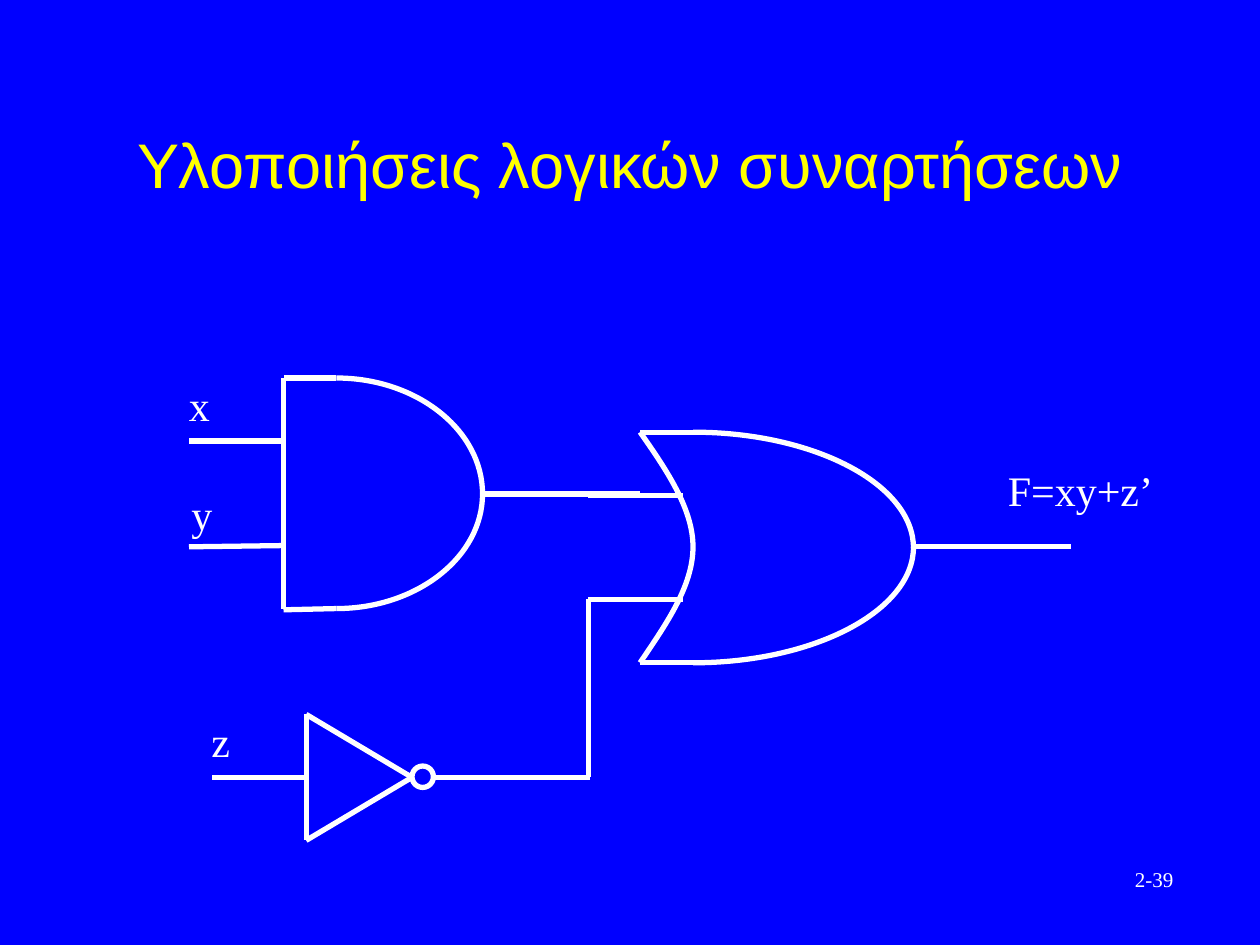
from dataclasses import dataclass

from lxml import etree
from pptx import Presentation
from pptx.dml.color import RGBColor
from pptx.enum.shapes import MSO_CONNECTOR, MSO_SHAPE
from pptx.enum.text import MSO_ANCHOR, MSO_AUTO_SIZE, PP_ALIGN
from pptx.oxml.ns import qn
from pptx.util import Inches, Pt

STRAIGHT = MSO_CONNECTOR.STRAIGHT
OVAL = MSO_SHAPE.OVAL
MIDDLE = MSO_ANCHOR.MIDDLE
CENTER = PP_ALIGN.CENTER
NO_AUTOFIT, GROW = MSO_AUTO_SIZE.NONE, MSO_AUTO_SIZE.SHAPE_TO_FIT_TEXT
TITLE_ONLY = 5
ARC_RATIO = 0.55  # cubic control distance of a quarter ellipse

Point = tuple[float, float]


@dataclass(frozen=True)
class Theme:
    background: RGBColor = RGBColor(0x00, 0x00, 0xFF)
    ink: RGBColor = RGBColor(0xFF, 0xFF, 0xFF)
    title: RGBColor = RGBColor(0xFF, 0xFF, 0x00)
    title_font: str = "Arial"
    label_font: str = "Times New Roman"
    title_size: int = 36
    label_size: int = 24
    number_size: int = 12
    line_width: int = 3


@dataclass(frozen=True)
class Wire:
    start: Point
    end: Point


@dataclass(frozen=True)
class Arc:
    """Quarter ellipse from its horizontal end to its rightmost tip."""
    start: Point
    tip: Point


@dataclass(frozen=True)
class Segment:
    """Cubic curve from the previous point to end."""
    first: Point
    second: Point
    end: Point


@dataclass(frozen=True)
class Label:
    text: str
    left: float
    top: float
    width: float
    height: float = 0.5
    size: int = Theme.label_size


THEME = Theme()

WIRES = [
    # AND gate body, inputs and output
    Wire((2.67, 4.83), (2.25, 4.84)),
    Wire((2.67, 3), (2.25, 3)),
    Wire((2.25, 3), (2.25, 4.83)),
    Wire((2.25, 3.5), (1.5, 3.5)),
    Wire((2.25, 4.33), (1.5, 4.34)),
    Wire((3.83, 3.92), (5.08, 3.92)),
    # OR gate body, inputs and output
    Wire((5.5, 5.26), (5.08, 5.26)),
    Wire((5.5, 3.43), (5.08, 3.43)),
    Wire((5.42, 3.93), (4.67, 3.93)),
    Wire((5.42, 4.76), (4.67, 4.76)),
    Wire((7.25, 4.34), (8.5, 4.34)),
    # NOT gate input, output and triangle
    Wire((2.43, 6.17), (1.68, 6.17)),
    Wire((3.43, 6.17), (4.68, 6.17)),
    Wire((2.43, 5.67), (2.43, 6.67)),
    Wire((2.43, 6.67), (3.27, 6.17)),
    Wire((2.43, 5.67), (3.27, 6.17)),
    # Riser from the NOT gate to the OR gate
    Wire((4.67, 4.75), (4.67, 6.17)),
]

ARCS = [
    Arc((2.67, 3), (3.83, 3.92)),
    Arc((2.67, 4.83), (3.83, 3.92)),
    Arc((5.5, 3.43), (7.25, 4.35)),
    Arc((5.5, 5.26), (7.25, 4.34)),
]

# Hollow back of the OR gate: two mirrored halves
OR_BACK_START = (5.08, 3.43)
OR_BACK = [
    Segment((5.29, 3.73), (5.5, 4.04), (5.5, 4.34)),
    Segment((5.5, 4.65), (5.29, 4.95), (5.08, 5.26)),
]

LABELS = [
    Label("x", 1.4, 2.96, 0.37),
    Label("y", 1.42, 3.83, 0.37),
    Label("z", 1.58, 5.63, 0.35),
    Label("F=xy+z’", 7.9, 3.64, 1.38),
    Label("2-39", 8.91, 6.83, 0.53, 0.3, THEME.number_size),
]


def style_line(shape) -> None:
    shape.line.color.rgb = THEME.ink
    shape.line.width = Pt(THEME.line_width)


def style_outline(shape) -> None:
    shape.shadow.inherit = False
    shape.fill.background()
    style_line(shape)


def style_text(paragraph, font_name: str, size: int, color: RGBColor) -> None:
    for run in paragraph.runs:
        run.font.name = font_name
        run.font.size = Pt(size)
        run.font.color.rgb = color


def draw_curve(slide, start: Point, segments: list[Segment]) -> None:
    """Build a freeform through the end points, then bend each segment."""
    builder = slide.shapes.build_freeform(Inches(start[0]), Inches(start[1]), scale=1.0)
    builder.add_line_segments(
        [(Inches(x), Inches(y)) for x, y in (segment.end for segment in segments)],
        close=False)
    shape = builder.convert_to_shape()
    straight_parts = list(shape._element.iter(qn("a:lnTo")))
    for straight, segment in zip(straight_parts, segments):
        cubic = etree.Element(qn("a:cubicBezTo"))
        for x, y in (segment.first, segment.second, segment.end):
            etree.SubElement(cubic, qn("a:pt"), x=str(Inches(x) - shape.left),
                             y=str(Inches(y) - shape.top))
        straight.getparent().replace(straight, cubic)
    style_outline(shape)


def draw_arc(slide, arc: Arc) -> None:
    (x, y), (tip_x, tip_y) = arc.start, arc.tip
    first = (x + ARC_RATIO * (tip_x - x), y)
    second = (tip_x, tip_y + ARC_RATIO * (y - tip_y))
    draw_curve(slide, arc.start, [Segment(first, second, arc.tip)])


def draw_wire(slide, wire: Wire) -> None:
    ends = [Inches(value) for value in (*wire.start, *wire.end)]
    connector = slide.shapes.add_connector(STRAIGHT, *ends)
    style_line(connector)
    etree.SubElement(connector._element.spPr, qn("a:effectLst"))


def draw_bubble(slide, left: float, top: float, diameter: float) -> None:
    style_outline(slide.shapes.add_shape(
        OVAL, Inches(left), Inches(top), Inches(diameter), Inches(diameter)))


def draw_label(slide, label: Label) -> None:
    box = slide.shapes.add_textbox(
        Inches(label.left), Inches(label.top), Inches(label.width), Inches(label.height))
    text_frame = box.text_frame
    text_frame.text = label.text
    text_frame.word_wrap = False
    text_frame.auto_size = GROW
    style_text(text_frame.paragraphs[0], THEME.label_font, label.size, THEME.ink)


def draw_title(slide, text: str) -> None:
    title = slide.shapes.title
    title.left, title.top = Inches(0.75), Inches(0.67)
    title.width, title.height = Inches(8.5), Inches(1.25)
    text_frame = title.text_frame
    text_frame.text = text
    text_frame.auto_size = NO_AUTOFIT
    text_frame.vertical_anchor = MIDDLE
    paragraph = text_frame.paragraphs[0]
    paragraph.alignment = CENTER
    style_text(paragraph, THEME.title_font, THEME.title_size, THEME.title)


def main() -> None:
    presentation = Presentation()
    presentation.slide_width, presentation.slide_height = Inches(10), Inches(7.5)
    slide = presentation.slides.add_slide(presentation.slide_layouts[TITLE_ONLY])
    slide.background.fill.solid()
    slide.background.fill.fore_color.rgb = THEME.background
    draw_title(slide, "Υλοποιήσεις λογικών συναρτήσεων")

    # Gates and wiring
    for arc in ARCS:
        draw_arc(slide, arc)
    draw_curve(slide, OR_BACK_START, OR_BACK)
    for wire in WIRES:
        draw_wire(slide, wire)
    draw_bubble(slide, 3.27, 6.08, 0.17)

    # Signal names and slide number
    for label in LABELS:
        draw_label(slide, label)
    presentation.save("out.pptx")


if __name__ == "__main__":
    main()
